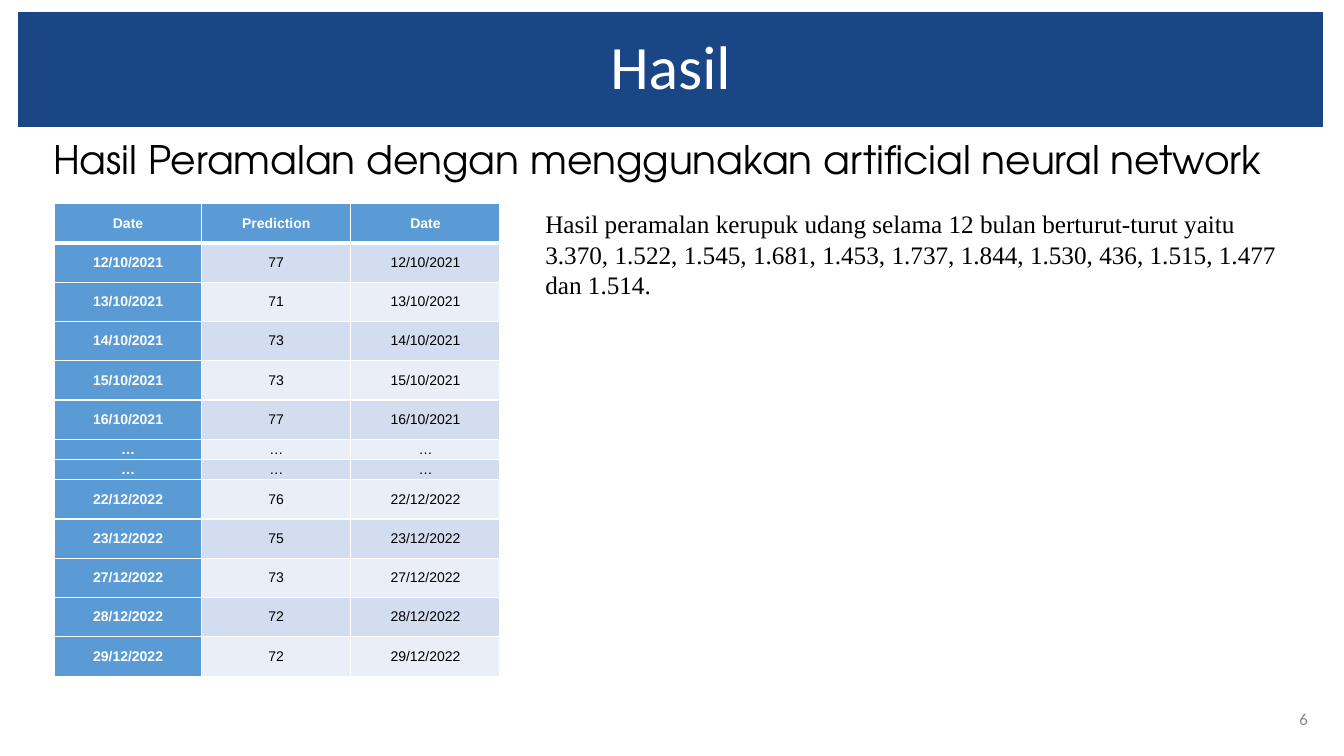
from dataclasses import dataclass

from lxml.etree import SubElement
from pptx import Presentation
from pptx.dml.color import RGBColor
from pptx.enum.shapes import MSO_SHAPE
from pptx.enum.text import MSO_ANCHOR, PP_ALIGN
from pptx.oxml import parse_xml
from pptx.oxml.ns import nsdecls, qn
from pptx.util import Inches, Pt


@dataclass(frozen=True)
class Theme:
    # Colours
    banner: str = "1B4685"
    header: str = "5B9BD5"
    bands: tuple = ("D2DEEF", "EAEFF7")
    white: str = "FFFFFF"
    black: str = "000000"
    grey: str = "888888"
    # Typefaces
    title_font: str = "Calibri"
    heading_font: str = "TeX Gyre Adventor"
    table_font: str = "Arial"
    text_font: str = "Times New Roman"
    # Type sizes
    title_size: int = 44
    heading_size: int = 28
    text_size: int = 18
    number_size: int = 12
    table_size: int = 10


class SlideBuilder:
    def __init__(self, page, theme):
        self.page = page
        self.theme = theme

    def set_text(self, frame, text, font, size, color, align=PP_ALIGN.LEFT, bold=False):
        frame.text = text
        para = frame.paragraphs[0]
        para.alignment = align
        for span in para.runs:
            span.font.name = font
            span.font.size = Pt(size)
            span.font.bold = bold
            span.font.color.rgb = RGBColor.from_string(color)
        return para

    def banner(self, place, text):
        box = self.page.shapes.add_shape(MSO_SHAPE.RECTANGLE, *map(Inches, place))
        box.shadow.inherit = False
        box.fill.solid()
        box.fill.fore_color.rgb = RGBColor.from_string(self.theme.banner)
        box.line.fill.background()
        box.text_frame.vertical_anchor = MSO_ANCHOR.MIDDLE
        para = self.set_text(box.text_frame, text, self.theme.title_font,
                             self.theme.title_size, self.theme.white, PP_ALIGN.CENTER)
        para.line_spacing = 0.9

    def text(self, place, text, font, size, color,
             align=PP_ALIGN.LEFT, anchor=MSO_ANCHOR.TOP):
        box = self.page.shapes.add_textbox(*map(Inches, place))
        box.text_frame.word_wrap = True
        box.text_frame.vertical_anchor = anchor
        return self.set_text(box.text_frame, text, font, size, color, align)

    def heading(self, place, text):
        para = self.text(place, text, self.theme.heading_font,
                         self.theme.heading_size, self.theme.black)
        para.line_spacing = 0.9
        properties = para._p.get_or_add_pPr()
        properties.set("marL", str(Inches(0.5)))
        properties.set("indent", str(Inches(-0.25)))
        SubElement(properties, qn("a:buNone"))

    def borders(self, cell, top, bottom):
        widths = {"lnL": 1, "lnR": 1, "lnT": top, "lnB": bottom}
        for place, (side, width) in enumerate(widths.items()):
            line = parse_xml(
                f'<a:{side} {nsdecls("a")} w="{Pt(width)}"><a:solidFill>'
                f'<a:srgbClr val="{self.theme.white}"/></a:solidFill></a:{side}>')
            cell._tc.get_or_add_tcPr().insert(place, line)

    def cell(self, cell, text, row, column):
        strong = row == 0 or column == 0
        cell.margin_left = cell.margin_right = Inches(0.07)
        cell.margin_top = cell.margin_bottom = 0
        cell.vertical_anchor = MSO_ANCHOR.MIDDLE
        cell.fill.solid()
        fill = self.theme.header if strong else self.theme.bands[(row - 1) % 2]
        cell.fill.fore_color.rgb = RGBColor.from_string(fill)
        self.borders(cell, top=3 if row == 1 else 1, bottom=3 if row == 0 else 1)
        self.set_text(cell.text_frame, text, self.theme.table_font, self.theme.table_size,
                      self.theme.white if strong else self.theme.black,
                      PP_ALIGN.CENTER, strong)

    def table(self, left, top, widths, heights, rows):
        place = (left, top, sum(widths), sum(heights))
        table = self.page.shapes.add_table(
            len(rows), len(widths), *map(Inches, place)).table
        table.first_row = table.horz_banding = False
        for column, width in zip(table.columns, widths):
            column.width = Inches(width)
        for line, height in zip(table.rows, heights):
            line.height = Inches(height)
        for row, values in enumerate(rows):
            for column, value in enumerate(values):
                self.cell(table.cell(row, column), value, row, column)


FORECAST = [
    ("12/10/2021", "77"), ("13/10/2021", "71"), ("14/10/2021", "73"),
    ("15/10/2021", "73"), ("16/10/2021", "77"), ("…", "…"), ("…", "…"),
    ("22/12/2022", "76"), ("23/12/2022", "75"), ("27/12/2022", "73"),
    ("28/12/2022", "72"), ("29/12/2022", "72"),
]


def main():
    deck = Presentation()
    deck.slide_width, deck.slide_height = Inches(13.33), Inches(7.5)
    theme = Theme()
    slide = SlideBuilder(deck.slides.add_slide(deck.slide_layouts[6]), theme)

    # Page number
    slide.text((12.5, 6.93, 0.57, 0.4), "6", theme.title_font, theme.number_size,
               theme.grey, PP_ALIGN.RIGHT, MSO_ANCHOR.MIDDLE)

    # Title and heading
    slide.banner((0.18, 0.12, 12.94, 1.14), "Hasil")
    slide.heading((0.18, 1.35, 12.94, 5.57),
                  "Hasil Peramalan dengan menggunakan artificial neural network")

    # Forecast table: the date closes each row again
    rows = [(date, value, date) for date, value in [("Date", "Prediction"), *FORECAST]]
    heights = [0.2 if row[0] == "…" else 0.39 for row in rows]
    slide.table(0.54, 2.02, (1.46, 1.48, 1.48), heights, rows)

    # Summary of the results
    slide.text((5.31, 2.02, 7.48, 1.01),
               "Hasil peramalan kerupuk udang selama 12 bulan berturut-turut yaitu "
               "3.370, 1.522, 1.545, 1.681, 1.453, 1.737, 1.844, 1.530, 436, 1.515, "
               "1.477 dan 1.514.",
               theme.text_font, theme.text_size, theme.black)

    deck.save("out.pptx")


if __name__ == "__main__":
    main()
